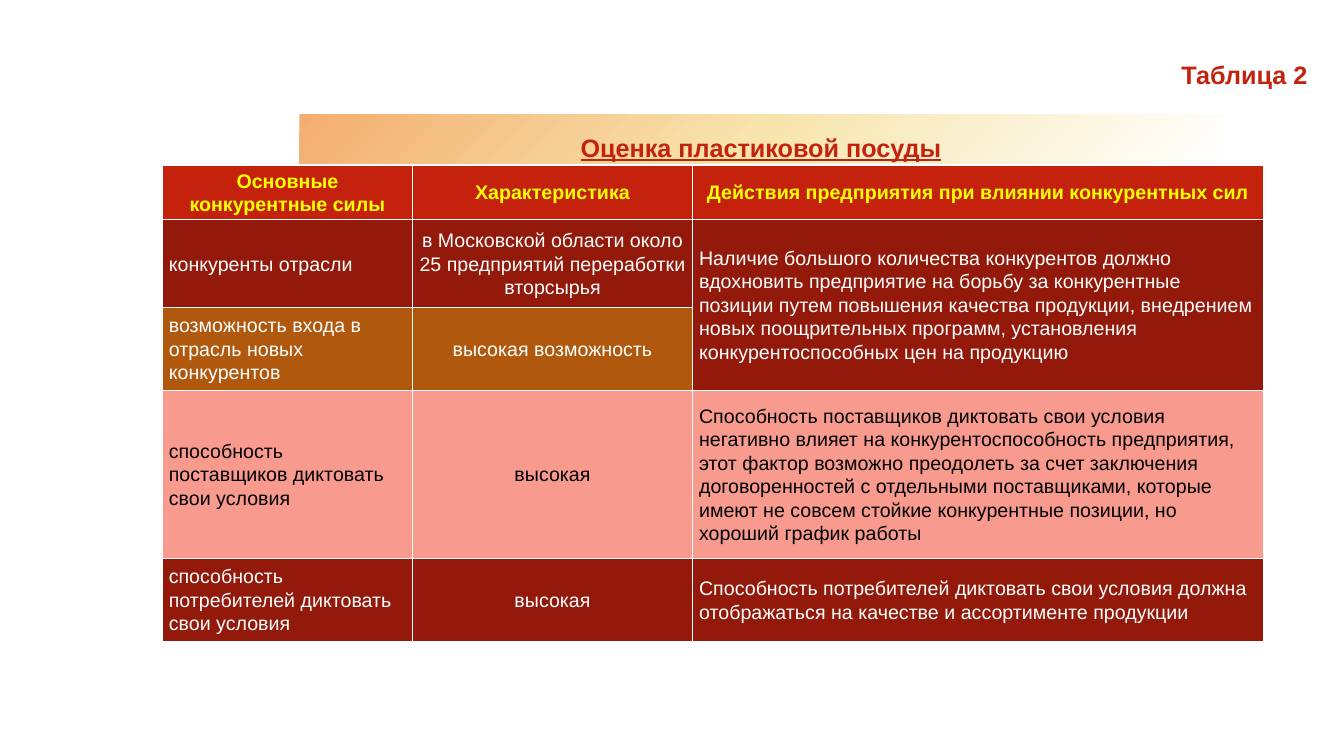
from copy import deepcopy
from dataclasses import dataclass
from typing import Any, Optional

from pptx import Presentation
from pptx.dml.color import RGBColor
from pptx.enum.shapes import MSO_SHAPE
from pptx.enum.text import MSO_ANCHOR, MSO_AUTO_SIZE, PP_ALIGN
from pptx.oxml import parse_xml
from pptx.oxml.ns import nsdecls
from pptx.util import Pt


@dataclass(frozen=True)
class Theme:
    font: str = "Arial"
    red: str = "C4220D"
    dark_red: str = "93190A"
    brown: str = "B0590E"
    pink: str = "F89A8E"
    yellow: str = "FFFF00"
    white: str = "FFFFFF"
    black: str = "000000"
    band: tuple[str, ...] = ("F4AD70", "F7E5AD", "FFFFFF")
    title_size: float = 18
    table_size: float = 14


@dataclass(frozen=True)
class Box:
    left: float
    top: float
    width: float
    height: float

    def emu(self) -> tuple[int, ...]:
        return Pt(self.left), Pt(self.top), Pt(self.width), Pt(self.height)


@dataclass(frozen=True)
class Row:
    height: float
    fill: str
    color: str
    texts: tuple[Optional[str], ...]  # None continues the cell above


THEME = Theme()
LEFT, CENTER, RIGHT = PP_ALIGN.LEFT, PP_ALIGN.CENTER, PP_ALIGN.RIGHT

CAPTION = Box(835.2, 38.9, 105.8, 29)
BAND = Box(213.84, 81.8, 659.52, 36)
TABLE = Box(116.1, 117.8, 786.2, 340)
COLUMNS = (178.4, 200.4, 407.4)
HEADER_ALIGN = (CENTER, CENTER, CENTER)
BODY_ALIGN = (LEFT, CENTER, LEFT)

ROWS = (
    Row(39, THEME.red, THEME.yellow, (
        "Основные конкурентные силы",
        "Характеристика",
        "Действия предприятия при влиянии конкурентных сил")),
    Row(62.8, THEME.dark_red, THEME.white, (
        "конкуренты отрасли",
        "в Московской области около 25 предприятий переработки вторсырья",
        "Наличие большого количества конкурентов должно вдохновить предприятие "
        "на борьбу за конкурентные позиции путем повышения качества продукции, "
        "внедрением новых поощрительных программ, установления "
        "конкурентоспособных цен на продукцию")),
    Row(59.2, THEME.brown, THEME.white, (
        "возможность входа в отрасль новых конкурентов",
        "высокая возможность",
        None)),
    Row(120, THEME.pink, THEME.black, (
        "способность поставщиков диктовать свои условия",
        "высокая",
        "Способность поставщиков диктовать свои условия негативно влияет на "
        "конкурентоспособность предприятия, этот фактор возможно преодолеть за "
        "счет заключения договоренностей с отдельными поставщиками, которые "
        "имеют не совсем стойкие конкурентные позиции, но хороший график работы")),
    Row(59.2, THEME.dark_red, THEME.white, (
        "способность потребителей диктовать свои условия",
        "высокая",
        "Способность потребителей диктовать свои условия должна отображаться "
        "на качестве и ассортименте продукции")),
)


def write(tf: Any, text: str, color: str, align: PP_ALIGN,
          spacing: float = 1.0, **formats: Any) -> None:
    p = tf.paragraphs[0]
    p.alignment = align
    p.line_spacing = spacing
    r = p.add_run()
    r.text = text
    for name, value in {"name": THEME.font, **formats}.items():
        setattr(r.font, name, value)
    r.font.color.rgb = RGBColor.from_string(color)


def add_caption(s: Any) -> None:
    tf = s.shapes.add_textbox(*CAPTION.emu()).text_frame
    tf.word_wrap = False
    tf.auto_size = MSO_AUTO_SIZE.SHAPE_TO_FIT_TEXT
    write(tf, "Таблица 2", THEME.red, RIGHT, size=Pt(THEME.title_size), bold=True)


def add_title_band(s: Any) -> None:
    sp = s.shapes.add_shape(MSO_SHAPE.RECTANGLE, *BAND.emu())
    sp.shadow.inherit = False
    sp.line.fill.background()
    sp.fill.gradient()
    sp.fill.gradient_angle = 315
    # The default gradient has two stops; add the middle one
    stops = sp.fill._fill._gradFill.gsLst
    stops.insert(1, deepcopy(stops[0]))
    for i, (stop, color) in enumerate(zip(sp.fill.gradient_stops, THEME.band)):
        stop.position = i / (len(THEME.band) - 1)
        stop.color.rgb = RGBColor.from_string(color)
    tf = sp.text_frame
    tf.word_wrap = True
    tf.vertical_anchor = MSO_ANCHOR.MIDDLE
    write(tf, "Оценка пластиковой посуды", THEME.red, CENTER, 1.5,
          size=Pt(THEME.title_size), bold=True, underline=True)


def set_borders(cell: Any) -> None:
    tc_pr = cell._tc.get_or_add_tcPr()
    for i, side in enumerate(("lnL", "lnR", "lnT", "lnB")):
        tc_pr.insert(i, parse_xml(
            f'<a:{side} {nsdecls("a")} w="{Pt(1)}"><a:solidFill>'
            f'<a:srgbClr val="{THEME.white}"/></a:solidFill></a:{side}>'))


def add_forces_table(s: Any) -> None:
    table = s.shapes.add_table(len(ROWS), len(COLUMNS), *TABLE.emu()).table
    table.first_row = table.horz_banding = False
    for column, width in zip(table.columns, COLUMNS):
        column.width = Pt(width)
    margins = {"margin_left": Pt(4.5), "margin_right": Pt(4.5),
               "margin_top": 0, "margin_bottom": 0}
    for y, row in enumerate(ROWS):
        table.rows[y].height = Pt(row.height)
        aligns = BODY_ALIGN if y else HEADER_ALIGN
        for x, (text, align) in enumerate(zip(row.texts, aligns)):
            cell = table.cell(y, x)
            for name, value in margins.items():
                setattr(cell, name, value)
            cell.vertical_anchor = MSO_ANCHOR.MIDDLE
            cell.fill.solid()
            cell.fill.fore_color.rgb = RGBColor.from_string(row.fill)
            set_borders(cell)
            if text is None:
                table.cell(y - 1, x).merge(cell)
            else:
                write(cell.text_frame, text, row.color, align, 1.07,
                      size=Pt(THEME.table_size), bold=y == 0)


def main() -> None:
    prs = Presentation()
    prs.slide_width, prs.slide_height = Pt(960), Pt(540)
    s = prs.slides.add_slide(prs.slide_layouts[6])
    add_caption(s)
    add_title_band(s)
    add_forces_table(s)
    prs.save("out.pptx")


if __name__ == "__main__":
    main()
